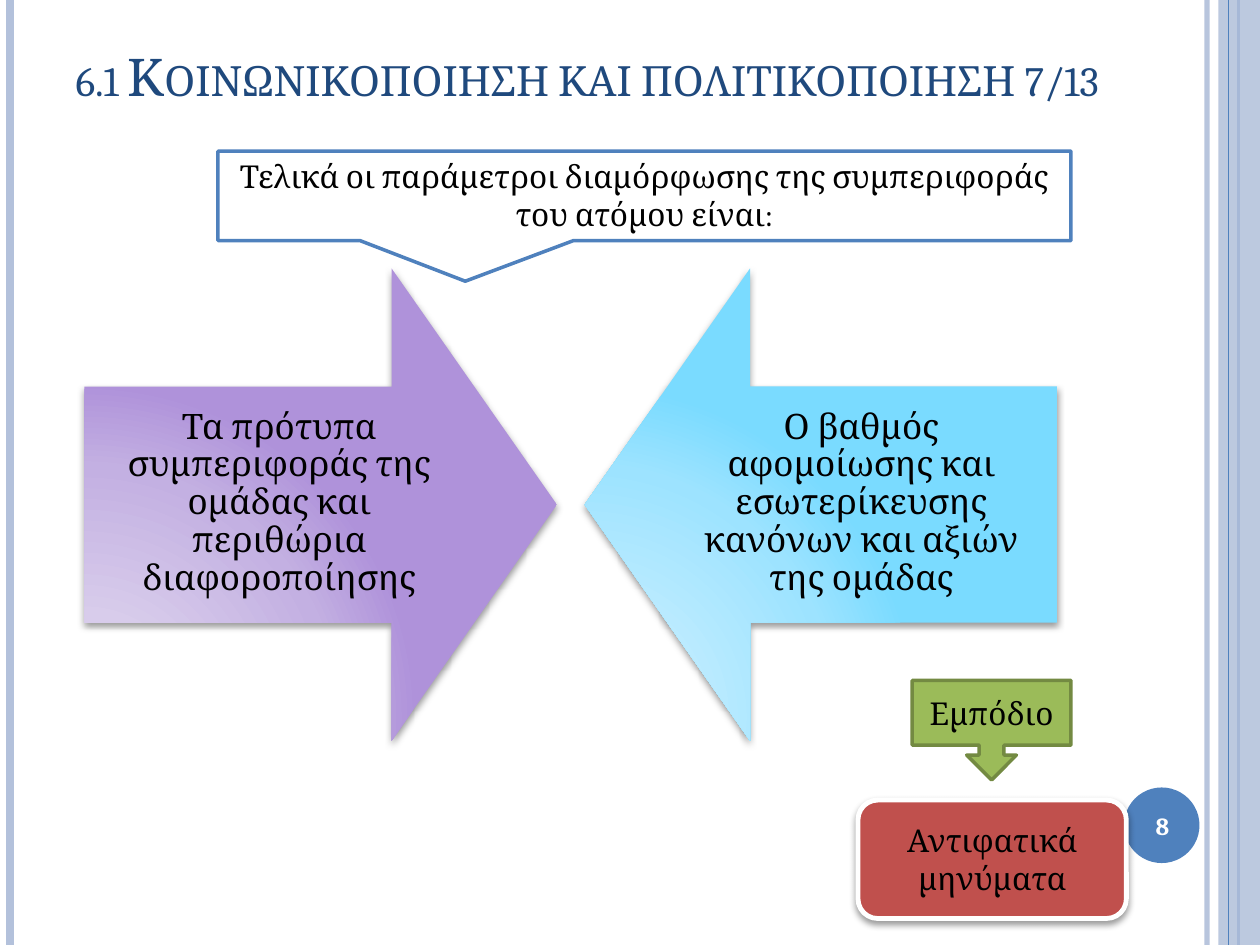
from dataclasses import dataclass

from lxml.etree import SubElement
from pptx import Presentation
from pptx.dml.color import RGBColor
from pptx.enum.shapes import MSO_CONNECTOR, MSO_SHAPE as Shape
from pptx.enum.text import MSO_ANCHOR as Anchor, MSO_AUTO_SIZE as AutoSize, PP_ALIGN as Align
from pptx.oxml.ns import qn
from pptx.util import Inches, Pt


@dataclass(frozen=True)
class Theme:
    font: str = "Cambria"
    title_size: float = 29.7
    arrow_size: float = 20
    body_size: float = 18
    number_size: float = 14
    white: str = "FFFFFF"
    black: str = "000000"
    navy: str = "1F497D"
    blue: str = "4F81BD"
    pale_blue: str = "B3C1DB"
    red: str = "C0504D"
    green: str = "9BBB59"
    dark_green: str = "738A42"
    stops: tuple = (0, 30, 75, 100)
    purple_fade: tuple = ("DBD0ED", "D8CCEB", "C3B0E2", "AF92DA")
    cyan_fade: tuple = ("C4EEFF", "BFECFF", "9DE3FF", "7ADBFF")


class SlideBuilder:
    def __init__(self, slide, theme):
        self.slide = slide
        self.theme = theme

    def add_alpha(self, owner, percent):
        color = next(owner.iter(qn("a:srgbClr")))
        SubElement(color, qn("a:alpha"), val=str(percent * 1000))

    def set_text(self, shape, text, size, color=None, bold=None, align=Align.CENTER,
                 anchor=Anchor.MIDDLE):
        frame = shape.text_frame
        frame.word_wrap = True
        frame.vertical_anchor = anchor
        frame.text = text
        para = frame.paragraphs[0]
        para.alignment = align
        para.font.name = self.theme.font
        para.font.size = Pt(size)
        para.font.bold = bold
        para.font.color.rgb = RGBColor.from_string(color or self.theme.black)
        return para

    def title(self, text, left, top, width, height):
        box = self.slide.shapes.title
        box.left, box.top, box.width, box.height = map(Inches, (left, top, width, height))
        box.text_frame.auto_size = AutoSize.NONE
        para = self.set_text(box, text, self.theme.title_size, self.theme.navy,
                             align=Align.LEFT, anchor=Anchor.TOP)
        para.runs[0].font._element.set("cap", "small")

    def rule(self, x, color, width, alpha=None):
        line = self.slide.shapes.add_connector(
            MSO_CONNECTOR.STRAIGHT, Inches(x), 0, Inches(x), Inches(7.5))
        line.line.color.rgb = RGBColor.from_string(color)
        line.line.width = Pt(width)
        if alpha:
            self.add_alpha(line._element.spPr, alpha)
        SubElement(line._element.spPr, qn("a:effectLst"))

    def shape(self, kind, left, top, width, height, fill=None, line=None, line_width=2):
        shape = self.slide.shapes.add_shape(kind, *map(Inches, (left, top, width, height)))
        shape.shadow.inherit = False
        if fill:
            shape.fill.solid()
            shape.fill.fore_color.rgb = RGBColor.from_string(fill)
        if line:
            shape.line.color.rgb = RGBColor.from_string(line)
            shape.line.width = Pt(line_width)
        else:
            shape.line.fill.background()
        return shape

    def drop_shadow(self, shape):
        effects = shape._element.spPr.find(qn("a:effectLst"))
        shadow = SubElement(effects, qn("a:outerShdw"), blurRad=str(Pt(4)), dist=str(Pt(2)),
                            dir="5400000", rotWithShape="0")
        SubElement(shadow, qn("a:srgbClr"), val=self.theme.black)
        self.add_alpha(shadow, 40)

    def radial_fill(self, shape, colors):
        shape.fill.gradient()
        fade = shape._element.spPr.find(qn("a:gradFill"))
        for child in list(fade):
            fade.remove(child)
        fade.set("rotWithShape", "0")
        stops = SubElement(fade, qn("a:gsLst"))
        for position, color in zip(self.theme.stops, colors):
            stop = SubElement(stops, qn("a:gs"), pos=str(position * 1000))
            SubElement(stop, qn("a:srgbClr"), val=color)
        circle = SubElement(fade, qn("a:path"), {"path": "circle"})
        SubElement(circle, qn("a:fillToRect"), l="5000", t="100000", r="120000", b="10000")

    def arrow(self, left, rotation, colors, text, text_left):
        arrow = self.shape(Shape.DOWN_ARROW, left, 2.13, 3.75, 3.75)
        arrow.rotation = rotation
        arrow.adjustments[0], arrow.adjustments[1] = 0.5, 0.35
        self.radial_fill(arrow, colors)
        self.drop_shadow(arrow)
        label = self.text(text, text_left, 3.06, 3.09, 1.87, self.theme.arrow_size)
        frame = label.text_frame
        frame.margin_left = frame.margin_right = Inches(0.16)
        frame.margin_top = frame.margin_bottom = Inches(0.16)
        frame.paragraphs[0].line_spacing = 0.9

    def text(self, text, left, top, width, height, size, color=None, bold=None):
        box = self.slide.shapes.add_textbox(*map(Inches, (left, top, width, height)))
        self.set_text(box, text, size, color, bold)
        return box


def main():
    theme = Theme()
    deck = Presentation()
    deck.slide_width, deck.slide_height = Inches(10), Inches(7.5)
    page = SlideBuilder(deck.slides.add_slide(deck.slide_layouts[5]), theme)

    # Side rules and band
    page.rule(9.58, theme.pale_blue, 3, alpha=93)
    page.rule(0.08, theme.pale_blue, 4.5)
    page.rule(9.83, theme.blue, 1.5)
    band = page.shape(Shape.RECTANGLE, 9.67, 0, 0.33, 7.5, theme.pale_blue)
    page.add_alpha(band._element.spPr, 87)
    page.rule(9.75, theme.blue, 0.75)

    # Title
    page.title("6.1 Κοινωνικοποιηση και πολιτικοποιηση 7/13", 0.5, 0.3, 9.07, 1.25)

    # Page number disc
    page.shape(Shape.OVAL, 8.92, 6.25, 0.6, 0.6, theme.blue)

    # Opposing arrows
    page.arrow(0.67, 270, theme.purple_fade,
               "Τα πρότυπα συμπεριφοράς της ομάδας και περιθώρια διαφοροποίησης", 0.67)
    page.arrow(4.64, 90, theme.cyan_fade,
               "Ο βαθμός αφομοίωσης και εσωτερίκευσης κανόνων και αξιών της ομάδας", 5.29)

    # Introductory callout
    intro = page.shape(Shape.RECTANGULAR_CALLOUT, 1.73, 1.2, 6.77, 0.71,
                       theme.white, theme.blue)
    intro.adjustments[0], intro.adjustments[1] = -0.21, 0.954
    page.set_text(intro, "Τελικά οι παράμετροι διαμόρφωσης της συμπεριφοράς του ατόμου είναι:",
                  theme.body_size, anchor=Anchor.TOP)
    intro.text_frame.auto_size = AutoSize.SHAPE_TO_FIT_TEXT

    # Obstacle and its content
    messages = page.shape(Shape.ROUNDED_RECTANGLE, 6.81, 6.35, 2.13, 0.94,
                          theme.red, theme.white, 2.75)
    page.drop_shadow(messages)
    page.set_text(messages, "Αντιφατικά μηνύματα", theme.body_size)
    obstacle = page.shape(Shape.DOWN_ARROW_CALLOUT, 7.24, 5.4, 1.26, 0.79,
                          theme.green, theme.dark_green)
    page.set_text(obstacle, "Εμπόδιο", theme.body_size)

    # Page number
    page.text("8", 8.89, 6.27, 0.67, 0.57, theme.number_size, theme.white, bold=True)

    deck.save("out.pptx")


if __name__ == "__main__":
    main()
